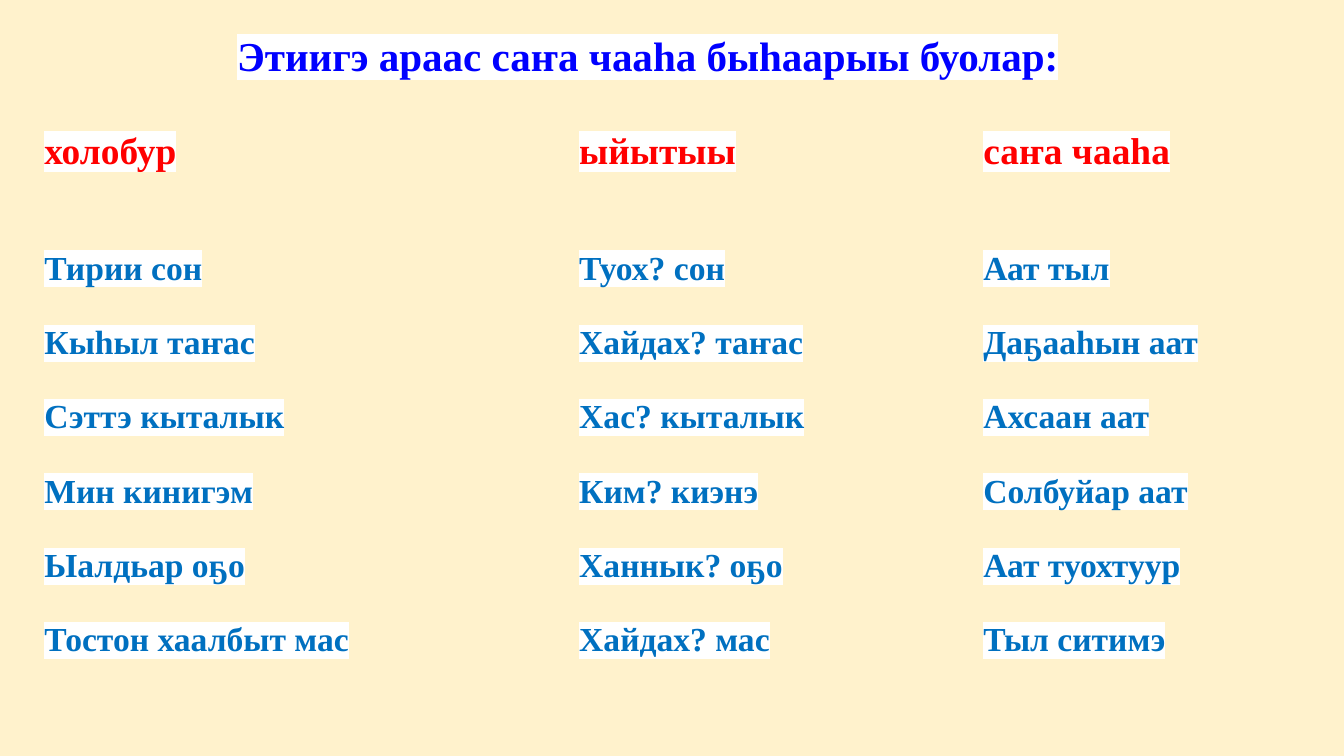
"""Build a slide with a table of phrases, questions and parts of speech."""
from lxml import etree
from pptx import Presentation
from pptx import util as u
from pptx.dml.color import RGBColor
from pptx.enum import text
from pptx.oxml.ns import qn

COLORS = {"back": "FFF2CC", "mark": "FFFFFF", "title": "0000FF",
          "head": "FF0000", "body": "0070C0"}
FONT = "Times New Roman"
PLAIN = "{2D5ABB26-0587-4C30-8999-92F81FD0307C}"
INSET = 7.2
WIDTHS = [286.5, 216.5, 194]
HEIGHTS = [64, 286]
HEADS = ["холобур", "ыйытыы", "саҥа чааһа"]
LISTS = [
    ["Тирии сон", "Кыһыл таҥас", "Сэттэ кыталык",
     "Мин кинигэм", "Ыалдьар оҕо", "Тостон хаалбыт мас"],
    ["Туох? сон", "Хайдах? таҥас", "Хас? кыталык",
     "Ким? киэнэ", "Ханнык? оҕо", "Хайдах? мас"],
    ["Аат тыл", "Даҕааһын аат", "Ахсаан аат",
     "Солбуйар аат", "Аат туохтуур", "Тыл ситимэ"],
]


def style(run, size, color):
    """Format a run as bold coloured text on a white highlight."""
    font = run.font
    font.size = u.Pt(size)
    font.bold = True
    font.color.rgb = RGBColor.from_string(COLORS[color])
    mark = etree.SubElement(run._r.get_or_add_rPr(), qn("a:highlight"))
    etree.SubElement(mark, qn("a:srgbClr"), val=COLORS["mark"])
    font.name = FONT


def write(frame, lines, size, color, gap=0):
    """Fill a text frame with evenly spaced lines."""
    frame.text = "\n".join(lines)
    for i, para in enumerate(frame.paragraphs):
        para.space_before = u.Pt(gap if i else 0)
        for run in para.runs:
            style(run, size, color)


def add_title(slide, words):
    """Add the heading box."""
    box = slide.shapes.add_textbox(u.Pt(120), u.Pt(8.9), u.Pt(524), u.Pt(41))
    frame = box.text_frame
    frame.word_wrap = True
    frame.auto_size = text.MSO_AUTO_SIZE.SHAPE_TO_FIT_TEXT
    frame.margin_left = frame.margin_right = u.Pt(INSET)
    frame.margin_top = frame.margin_bottom = u.Pt(INSET)
    write(frame, [words], 22, "title")


def fill_cell(cell, lines, size, color):
    """Write lines into a clear cell below a blank band."""
    cell.fill.background()
    cell.margin_left = cell.margin_right = cell.margin_bottom = u.Pt(INSET)
    cell.margin_top = u.Pt(30.4)
    write(cell.text_frame, lines, size, color, 19.9)


def add_grid(slide):
    """Add the table with a heading row and a row of lists."""
    frame = slide.shapes.add_table(
        len(HEIGHTS), len(WIDTHS), u.Pt(16.6), u.Pt(39.6),
        u.Pt(sum(WIDTHS)), u.Pt(sum(HEIGHTS)))
    table = frame.table
    table.first_row = table.horz_banding = False
    table._tbl.tblPr.find(qn("a:tableStyleId")).text = PLAIN
    for row, height in zip(table.rows, HEIGHTS):
        row.height = u.Pt(height)
    for i, width in enumerate(WIDTHS):
        table.columns[i].width = u.Pt(width)
        fill_cell(table.cell(0, i), [HEADS[i]], 20, "head")
        fill_cell(table.cell(1, i), LISTS[i], 18, "body")


def main():
    """Build and save the slide."""
    deck = Presentation()
    deck.slide_width, deck.slide_height = u.Pt(720), u.Pt(405)
    slide = deck.slides.add_slide(deck.slide_layouts[6])
    fill = slide.background.fill
    fill.solid()
    fill.fore_color.rgb = RGBColor.from_string(COLORS["back"])
    add_grid(slide)
    add_title(slide, "Этиигэ араас саҥа чааһа быһаарыы буолар:")
    deck.save("out.pptx")


if __name__ == "__main__":
    main()
